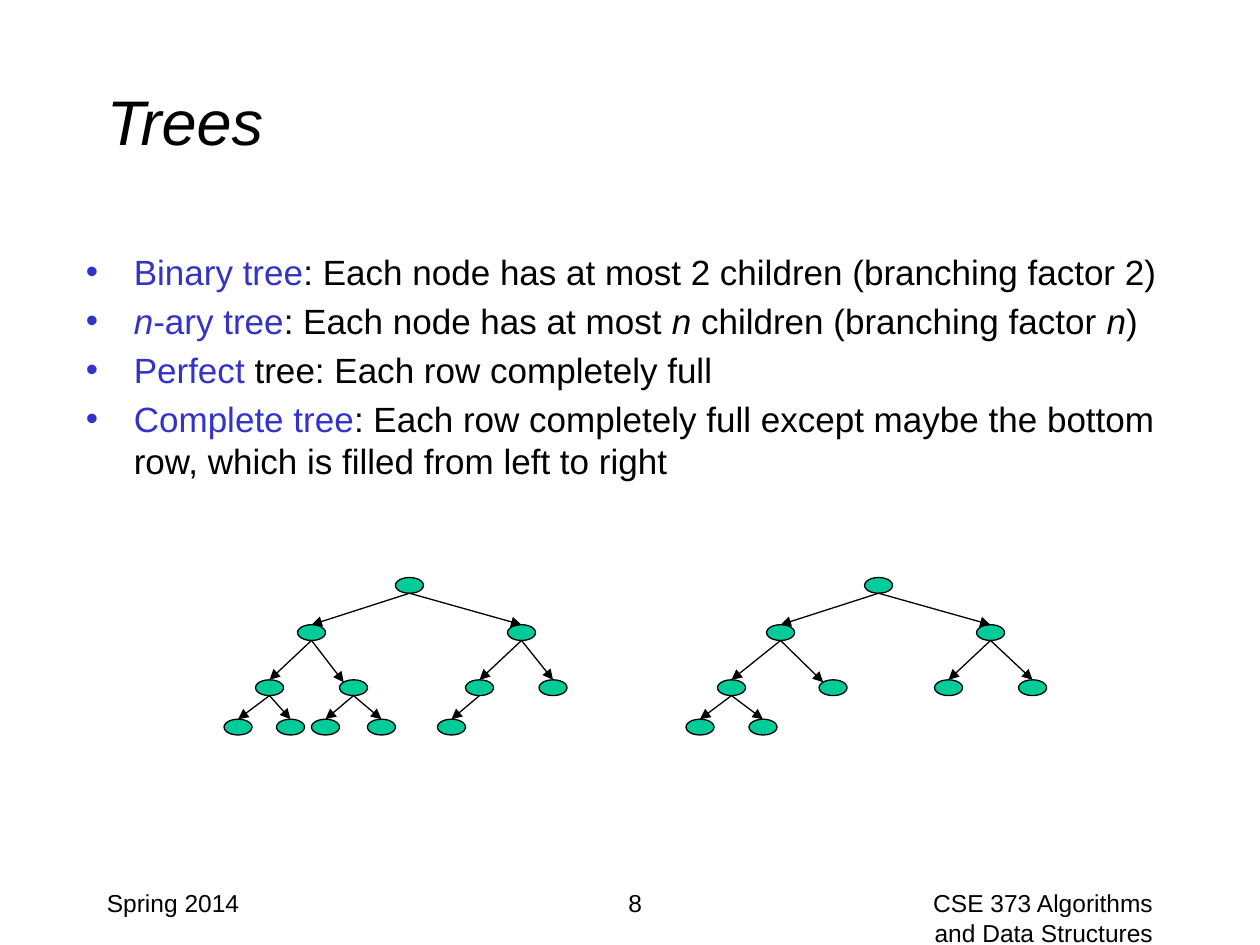
from dataclasses import dataclass

from lxml import etree
from pptx import Presentation
from pptx import util as u
from pptx.dml.color import RGBColor
from pptx.enum import shapes, text
from pptx.oxml import ns

BLACK = RGBColor(0x00, 0x00, 0x00)
BLUE = RGBColor(0x33, 0x33, 0xCC)
GREEN = RGBColor(0x00, 0xCC, 0x99)
COLS, ROWS = 120, 90
LEVELS = (55, 59.5, 64.75, 68.5)
NODE_W, NODE_H = 2.67, 1.5


@dataclass
class Node:
    """A tree node: offset from the root, children, and whether its edge lands on the side."""
    shift: float
    kids: tuple = ()
    side: bool = False


def tag(parent, name, **attrs):
    """Append a DrawingML element and return it."""
    return etree.SubElement(parent, ns.qn("a:" + name), attrs)


def write(para, words, size=20, color=BLACK, italic=False):
    """Add one formatted run to a paragraph."""
    run = para.add_run()
    run.text = words
    font = run.font
    font.name, font.size, font.italic = "Arial", u.Pt(size), italic
    font.color.rgb = color


class Deck:
    """Holds the style, the grid and the current slide."""

    def __init__(self):
        self.prs = Presentation()
        self.prs.slide_width, self.prs.slide_height = u.Inches(10), u.Inches(7.5)
        self.slide = self.prs.slides.add_slide(self.prs.slide_layouts[6])

    def spot(self, col, row):
        """Turn columns and rows into slide lengths."""
        return (round(self.prs.slide_width * col / COLS),
                round(self.prs.slide_height * row / ROWS))

    def frame(self, col, row, wide, high, anchor=text.MSO_ANCHOR.TOP):
        """Add a wrapping text box and return its frame."""
        box = self.slide.shapes.add_textbox(*self.spot(col, row), *self.spot(wide, high))
        box.text_frame.word_wrap = True
        box.text_frame.vertical_anchor = anchor
        return box.text_frame

    def label(self, words, area, align=text.PP_ALIGN.LEFT,
              anchor=text.MSO_ANCHOR.TOP, **style):
        """Add a text box with one run."""
        para = self.frame(*area, anchor).paragraphs[0]
        para.alignment = align
        write(para, words, **style)

    def bullets(self, items, area):
        """Add a bulleted list whose items are lists of (words, format)."""
        frame = self.frame(*area)
        for i, runs in enumerate(items):
            para = frame.add_paragraph() if i else frame.paragraphs[0]
            props = para._p.get_or_add_pPr()
            props.set("marL", str(u.Inches(0.38)))
            props.set("indent", str(-u.Inches(0.38)))
            tag(tag(props, "spcBef"), "spcPct", val="20000")
            tag(tag(props, "buClr"), "srgbClr", val=str(BLUE))
            tag(props, "buFont", typeface="Arial")
            tag(props, "buChar", char="•")
            for words, style in runs:
                write(para, words, **style)

    def dot(self, group, col, row):
        """Add a tree node centred on a column."""
        oval = group.shapes.add_shape(
            shapes.MSO_SHAPE.OVAL, *self.spot(col - NODE_W / 2, row),
            *self.spot(NODE_W, NODE_H))
        oval.shadow.inherit = False
        oval.fill.solid()
        oval.fill.fore_color.rgb = GREEN
        oval.line.color.rgb = BLACK
        oval.line.width = u.Pt(0.75)

    def arrow(self, group, start, end):
        """Add an arrow between two grid points."""
        edge = group.shapes.add_connector(
            shapes.MSO_CONNECTOR.STRAIGHT, *self.spot(*start), *self.spot(*end))
        edge.line.color.rgb = BLACK
        edge.line.width = u.Pt(0.75)
        tag(edge.line._get_or_add_ln(), "tailEnd", type="triangle")
        tag(edge._element.spPr, "effectLst")

    def tree(self, node, root, group=None, depth=0):
        """Draw a node, its subtrees and the arrows to them."""
        group = group or self.slide.shapes.add_group_shape()
        col, row = root + node.shift, LEVELS[depth]
        self.dot(group, col, row)
        for kid in node.kids:
            self.tree(kid, root, group, depth + 1)
            end = root + kid.shift, LEVELS[depth + 1]
            if kid.side:
                end = end[0] - 0.35 * NODE_W, end[1] + 0.15 * NODE_H
            self.arrow(group, (col, row + NODE_H), end)


def main():
    """Build the slide."""
    deck = Deck()
    key, slant = {"color": BLUE}, {"italic": True}
    deck.label("Trees", (9, 4, 102, 15), anchor=text.MSO_ANCHOR.MIDDLE,
               size=36, italic=True)
    deck.bullets([
        [("Binary tree", key),
         (": Each node has at most 2 children (branching factor 2)", {})],
        [("n", {**key, **slant}), ("-ary tree", key),
         (": Each node has at most ", {}), ("n ", slant),
         ("children (branching factor ", {}), ("n", slant), (")", {})],
        [("Perfect ", key), ("tree: Each row completely full", {})],
        [("Complete tree", key),
         (": Each row completely full except maybe the bottom row, "
          "which is filled from left to right", {})],
    ], (7, 23.25, 106, 61.75))

    align = text.PP_ALIGN
    for words, col, wide, side in (
            ("Spring 2014", 9, 25, align.LEFT),
            ("8", 38, 45, align.CENTER),
            ("CSE 373 Algorithms and Data Structures", 86, 25, align.RIGHT)):
        deck.label(words, (col, 84, wide, 6), align=side, size=14)

    deck.tree(Node(0, (
        Node(-9.33, (
            Node(-13.33, (Node(-16.33), Node(-11.33))),
            Node(-5.33, (Node(-8), Node(-2.67)), side=True))),
        Node(10.67, (Node(6.67, (Node(4),)), Node(13.67))))), 39)
    deck.tree(Node(0, (
        Node(-9.33, (
            Node(-14, (Node(-17), Node(-11))),
            Node(-4.33, side=True))),
        Node(10.67, (Node(6.67), Node(14.67))))), 83.67)
    deck.prs.save("out.pptx")


if __name__ == "__main__":
    main()
